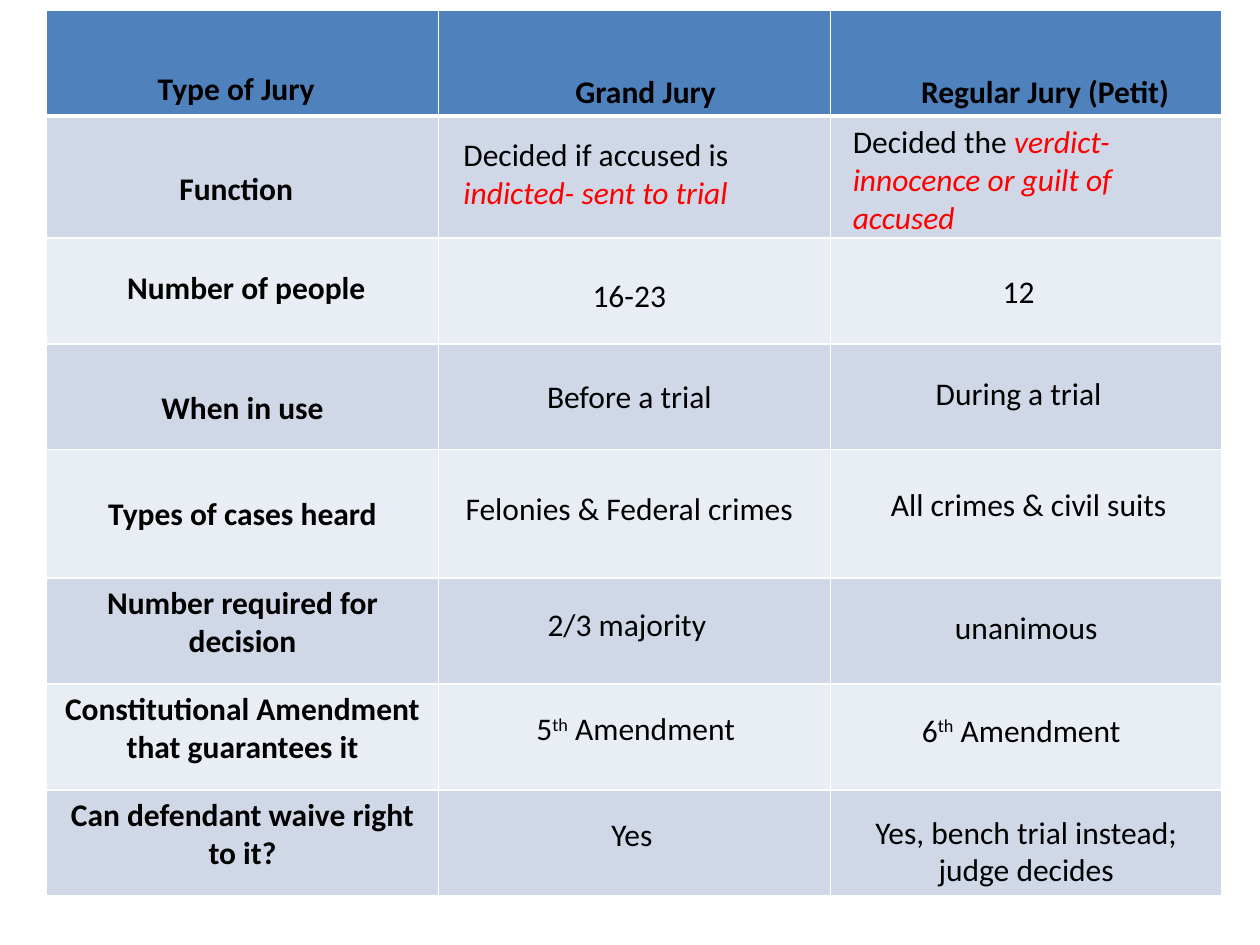
from dataclasses import dataclass
from itertools import accumulate

from lxml import etree
from pptx import Presentation, util as u
from pptx.dml.color import RGBColor
from pptx.enum import text
from pptx.oxml import ns


@dataclass(frozen=True)
class Theme:
    font: str = "Calibri"
    size: int = 18
    ink: str = "000000"
    accent: str = "FF0000"
    header: str = "4F81BD"
    bands: tuple = ("E9EDF4", "D0D8E8")
    rule: str = "FFFFFF"


THEME = Theme()
LEFT, TOP = 0.37, 0.08
COLUMNS = [3.11] * 3
ROWS = [0.84, 0.97, 0.84, 0.84, 1.02, 0.84, 0.84, 0.84]
LINE = 0.31
INSET = 0.05

# Row: (label, top margin)
CELL_LABELS = {
    3: ("When in use", 0.36),
    4: ("Types of cases heard", 0.36),
    5: ("Number required for decision", INSET),
    6: ("Constitutional Amendment that guarantees it", INSET),
    7: ("Can defendant waive right to it?", INSET),
}

# Row, column, offset from the cell's corner, width, lines, (text, style) runs
ENTRIES = [
    (0, 0, 0.13, 0.42, 2.75, 1, [("Type of Jury", "bold")]),
    (0, 1, 0.27, 0.44, 2.75, 1, [("Grand Jury", "bold")]),
    (0, 2, 0.33, 0.44, 2.75, 1, [("Regular Jury (Petit)", "bold")]),
    (1, 0, 0.13, 0.37, 2.75, 1, [("Function", "bold")]),
    (1, 1, 0.10, 0.10, 2.92, 2,
     [("Decided if accused is ", ""), ("indicted- sent to trial", "accent")]),
    (1, 2, 0.08, 0.00, 2.83, 3,
     [("Decided the ", ""), ("verdict- innocence or guilt of accused", "accent")]),
    (2, 0, 0.17, 0.19, 2.83, 1, [("Number of people", "bold")]),
    (2, 1, 0.10, 0.25, 2.83, 1, [("16-23", "")]),
    (2, 2, 0.08, 0.22, 2.83, 1, [("12", "")]),
    (3, 1, 0.14, 0.21, 2.75, 1, [("Before a trial", "")]),
    (3, 2, 0.08, 0.19, 2.83, 1, [("During a trial", "")]),
    (4, 1, 0.10, 0.26, 2.83, 1, [("Felonies & Federal crimes", "")]),
    (4, 2, 0.16, 0.23, 2.83, 1, [("All crimes & civil suits", "")]),
    (5, 1, 0.10, 0.16, 2.79, 1, [("2/3 majority", "")]),
    (5, 2, 0.16, 0.19, 2.79, 1, [("unanimous", "")]),
    (6, 1, 0.17, 0.15, 2.79, 1, [("5", ""), ("th", "super"), (" Amendment", "")]),
    (6, 2, 0.12, 0.16, 2.79, 1, [("6", ""), ("th", "super"), (" Amendment", "")]),
    (7, 1, 0.14, 0.15, 2.79, 1, [("Yes", "")]),
    (7, 2, 0.16, 0.13, 2.79, 2, [("Yes, bench trial instead; judge decides", "")]),
]


def style_font(font, style=""):
    font.name, font.size = THEME.font, u.Pt(THEME.size)
    accented = style == "accent"
    font.color.rgb = RGBColor.from_string(THEME.accent if accented else THEME.ink)
    font.bold, font.italic = style == "bold", accented


def add_runs(para, runs):
    for words, style in runs:
        span = para.add_run()
        span.text = words
        style_font(span.font, style)
        if style == "super":
            span._r.get_or_add_rPr().set("baseline", "30000")


def set_borders(cell, bottom):
    props = cell._tc.get_or_add_tcPr()
    for side, points in {"L": 1, "R": 1, "T": 1, "B": bottom}.items():
        line = etree.SubElement(props, ns.qn(f"a:ln{side}"), w=str(u.Pt(points)))
        fill = etree.SubElement(line, ns.qn("a:solidFill"))
        etree.SubElement(fill, ns.qn("a:srgbClr"), val=THEME.rule)


def add_grid(page):
    frame = page.shapes.add_table(
        len(ROWS), len(COLUMNS), u.Inches(LEFT), u.Inches(TOP),
        u.Inches(sum(COLUMNS)), u.Inches(sum(ROWS)))
    table = frame.table
    for column, width in zip(table.columns, COLUMNS):
        column.width = u.Inches(width)
    for number, (row, height) in enumerate(zip(table.rows, ROWS)):
        row.height = u.Inches(height)
        color = THEME.bands[number % 2] if number else THEME.header
        for cell in row.cells:
            set_borders(cell, bottom=1 if number else 3)
            cell.fill.solid()
            cell.fill.fore_color.rgb = RGBColor.from_string(color)
            style_font(cell.text_frame.paragraphs[0].font)
    for number, (label, margin) in CELL_LABELS.items():
        cell = table.cell(number, 0)
        cell.margin_top = u.Inches(margin)
        para = cell.text_frame.paragraphs[0]
        para.alignment = text.PP_ALIGN.CENTER
        add_runs(para, [(label, "bold")])


def add_entries(page):
    lefts = list(accumulate(COLUMNS, initial=LEFT))
    tops = list(accumulate(ROWS, initial=TOP))
    for row, column, dx, dy, width, lines, runs in ENTRIES:
        box = page.shapes.add_textbox(
            u.Inches(lefts[column] + dx), u.Inches(tops[row] + dy),
            u.Inches(width), u.Inches(lines * LINE + 2 * INSET))
        frame = box.text_frame
        frame.word_wrap = True
        frame.auto_size = text.MSO_AUTO_SIZE.SHAPE_TO_FIT_TEXT
        para = frame.paragraphs[0]
        explained = any(style == "accent" for _, style in runs)
        para.alignment = text.PP_ALIGN.LEFT if explained else text.PP_ALIGN.CENTER
        add_runs(para, runs)


def main():
    deck = Presentation()
    deck.slide_width, deck.slide_height = u.Inches(10), u.Inches(7.5)
    page = deck.slides.add_slide(deck.slide_layouts[6])
    add_grid(page)
    add_entries(page)
    deck.save("out.pptx")


if __name__ == "__main__":
    main()
